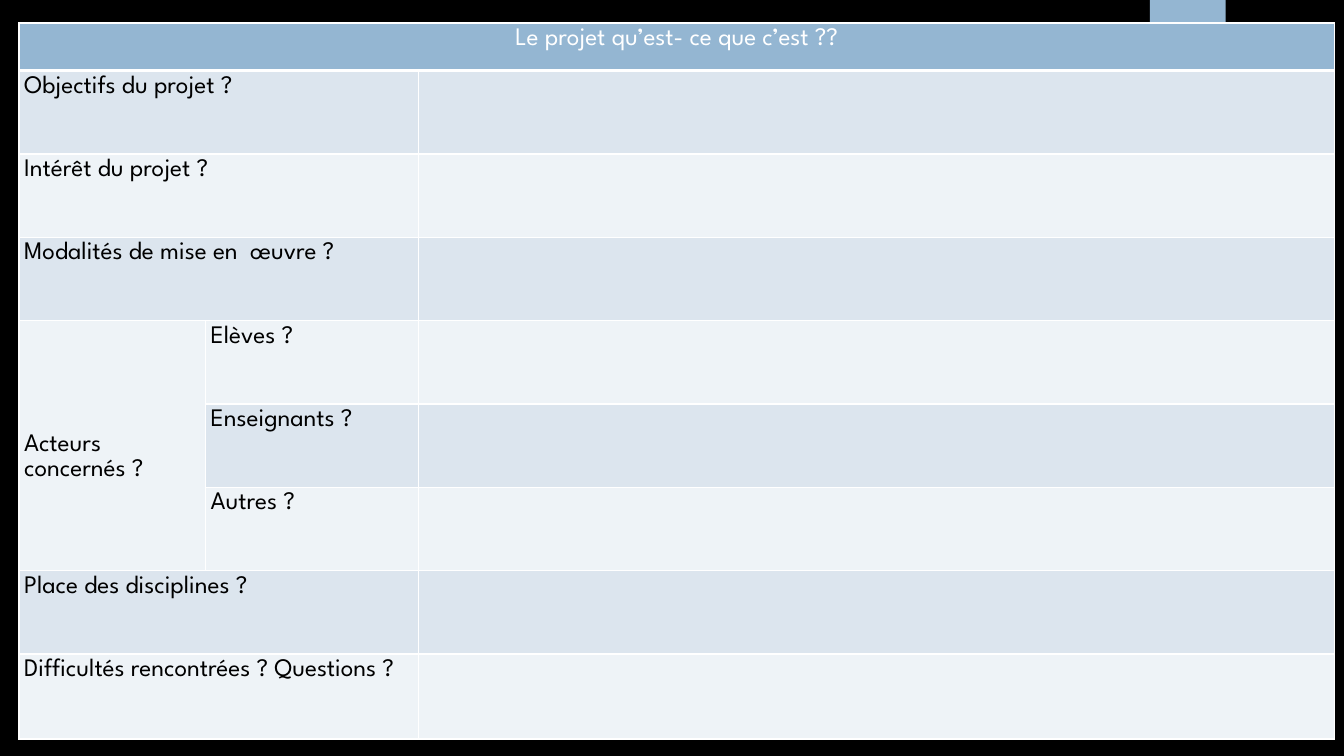
import dataclasses

import lxml.etree
import pptx
import pptx.dml.color
import pptx.enum.shapes
import pptx.enum.text
import pptx.oxml.ns
import pptx.util

Cm = pptx.util.Cm
Pt = pptx.util.Pt
ALIGN = pptx.enum.text.PP_ALIGN


@dataclasses.dataclass(frozen=True)
class Theme:
    back: str = "000000"
    head: str = "94B6D2"
    bands: tuple = ("DCE5EE", "EEF3F7")
    line: str = "FFFFFF"
    light: str = "FFFFFF"
    dark: str = "000000"
    font: str = "League Spartan"
    size: float = 18


THEME = Theme()

TITLE = "Le projet qu’est- ce que c’est ??"
# Row labels: a text, or a group name with its sub-rows
ROWS = [
    "Objectifs du projet ?",
    "Intérêt du projet ?",
    "Modalités de mise en  œuvre ?",
    ("Acteurs concernés ?", ["Elèves ?", "Enseignants ?", "Autres ?"]),
    "Place des disciplines ?",
    "Difficultés rencontrées ? Questions ?",
]
WIDTHS = (4.7, 5.36, 23.09)
HEIGHTS = (1.2, *[2.1] * 7, 2.14)


def paint(fill, color):
    fill.solid()
    fill.fore_color.rgb = pptx.dml.color.RGBColor.from_string(color)


def write(cell, text, color=THEME.dark, align=ALIGN.LEFT, top=0.08):
    """Put formatted text in a cell."""
    cell.margin_left = cell.margin_right = Cm(0.13)
    cell.margin_top, cell.margin_bottom = Cm(top), Cm(0.08)
    para = cell.text_frame.paragraphs[0]
    para.alignment = align
    para.line_spacing = 1.07
    para.space_after = Pt(8)
    run = para.add_run()
    run.text = text
    run.font.name = THEME.font
    run.font.size = Pt(THEME.size)
    run.font.color.rgb = pptx.dml.color.RGBColor.from_string(color)


def border(cell, base=1):
    """Draw the four edges of a cell, with its own width for the base."""
    props = cell._tc.get_or_add_tcPr()
    qn = pptx.oxml.ns.qn
    for side, width in zip("LRTB", (1, 1, 1, base)):
        edge = lxml.etree.SubElement(props, qn(f"a:ln{side}"), w=str(Pt(width)))
        fill = lxml.etree.SubElement(edge, qn("a:solidFill"))
        lxml.etree.SubElement(fill, qn("a:srgbClr"), val=THEME.line)


def tab(slide, left, top, width, height):
    """Coloured tab at the top edge."""
    shape = slide.shapes.add_shape(
        pptx.enum.shapes.MSO_SHAPE.RECTANGLE, left, top, width, height)
    shape.shadow.inherit = False
    paint(shape.fill, THEME.head)
    shape.line.fill.background()


def grid(slide, left, top, width, height):
    """Project table: a heading, then labels with blank answer cells."""
    table = slide.shapes.add_table(
        len(HEIGHTS), len(WIDTHS), left, top, width, height).table
    for col, size in zip(table.columns, WIDTHS):
        col.width = Cm(size)
    for row, size in zip(table.rows, HEIGHTS):
        row.height = Cm(size)

    # Borders and bands
    for num, row in enumerate(table.rows):
        for cell in row.cells:
            border(cell, base=1 if num else 3)
            paint(cell.fill, THEME.bands[(num - 1) % 2] if num else THEME.head)

    # Heading
    table.cell(0, 0).merge(table.cell(0, 2))
    write(table.cell(0, 0), TITLE, color=THEME.light, align=ALIGN.CENTER)

    # Labels
    num = 1
    for label in ROWS:
        first = table.cell(num, 0)
        if isinstance(label, str):
            first.merge(table.cell(num, 1))
            write(first, label)
            num += 1
        else:
            group, parts = label
            first.merge(table.cell(num + len(parts) - 1, 0))
            write(first, group, top=2.82)
            for part in parts:
                write(table.cell(num, 1), part)
                num += 1


def main():
    deck = pptx.Presentation()
    deck.slide_width, deck.slide_height = Cm(33.87), Cm(19.05)
    slide = deck.slides.add_slide(deck.slide_layouts[6])
    paint(slide.background.fill, THEME.back)
    tab(slide, Cm(28.98), Cm(0), Cm(1.91), Cm(3.18))
    grid(slide, Cm(0.48), Cm(0.58), Cm(sum(WIDTHS)), Cm(sum(HEIGHTS)))
    deck.save("out.pptx")


if __name__ == "__main__":
    main()
